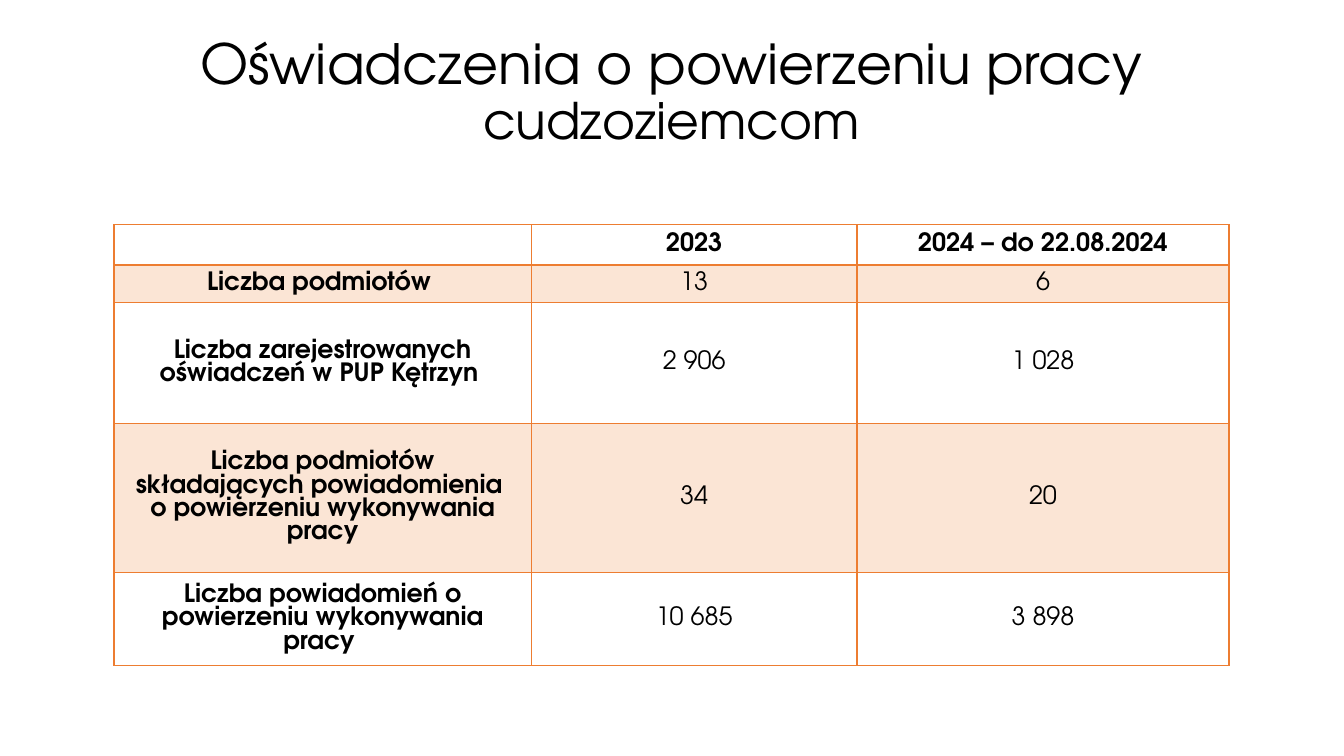
from lxml.etree import SubElement
from pptx import Presentation
from pptx.dml.color import RGBColor
from pptx.enum.text import MSO_ANCHOR as ANCHOR, PP_ALIGN as ALIGN
from pptx.oxml.ns import qn
from pptx.util import Inches, Pt

BLACK = RGBColor(0x00, 0x00, 0x00)
ORANGE = RGBColor(0xED, 0x7D, 0x31)

COLUMNS = [4.14, 3.23, 3.69]
HEIGHTS = [0.37, 0.37, 1.2, 1.48, 0.92]
ROWS = [
    ["", "2023", "2024 – do 22.08.2024"],
    ["Liczba podmiotów ", "13", "6"],
    ["Liczba zarejestrowanych oświadczeń w PUP Kętrzyn ", "2 906", "1 028"],
    ["Liczba podmiotów składających powiadomienia \no powierzeniu wykonywania pracy",
     "34", "20"],
    ["Liczba powiadomień o powierzeniu wykonywania pracy ", "10 685", "3 898"],
]


def write(p, text, size, bold=False, spacing=None):
    p.alignment = ALIGN.CENTER
    p.line_spacing = spacing
    r = p.add_run()
    r.text = text
    r.font.name = SlideBuilder.font
    r.font.size = Pt(size)
    r.font.bold = bold
    r.font.color.rgb = BLACK


class SlideBuilder:
    font = "TeX Gyre Adventor"

    def __init__(self, prs):
        self.s = prs.slides.add_slide(prs.slide_layouts[6])

    def title(self, runs, left, top, width, height):
        box = self.s.shapes.add_textbox(
            Inches(left), Inches(top), Inches(width), Inches(height))
        tf = box.text_frame
        tf.word_wrap = True
        tf.vertical_anchor = ANCHOR.MIDDLE
        for text, size in runs:
            write(tf.paragraphs[0], text, size, spacing=0.9)

    def border(self, cell, bottom):
        tc_pr = cell._tc.get_or_add_tcPr()
        widths = {"a:lnL": 1, "a:lnR": 1, "a:lnT": 1, "a:lnB": bottom}
        for i, (tag, width) in enumerate(widths.items()):
            ln = SubElement(tc_pr, qn(tag), w=str(Pt(width)))
            fill = SubElement(ln, qn("a:solidFill"))
            SubElement(fill, qn("a:srgbClr"), val=str(ORANGE))
            tc_pr.insert(i, ln)

    def shade(self, cell):
        cell.fill.solid()
        cell.fill.fore_color.rgb = ORANGE
        color = cell._tc.tcPr.find(".//" + qn("a:solidFill") + "/" + qn("a:srgbClr"))
        SubElement(color, qn("a:alpha"), val="20000")

    def cell(self, cell, text, bold, shaded, bottom):
        cell.vertical_anchor = ANCHOR.MIDDLE
        tf = cell.text_frame
        for i, line in enumerate(text.split("\n")):
            p = tf.add_paragraph() if i else tf.paragraphs[0]
            write(p, line, 18, bold, Pt(16.7))
        if shaded:
            self.shade(cell)
        else:
            cell.fill.background()
        self.border(cell, bottom)

    def table(self, rows, left, top):
        frame = self.s.shapes.add_table(
            len(rows), len(COLUMNS), Inches(left), Inches(top),
            Inches(sum(COLUMNS)), Inches(sum(HEIGHTS)))
        table = frame.table
        table.first_row = table.horz_banding = False
        for column, width in zip(table.columns, COLUMNS):
            column.width = Inches(width)
        for i, (row, height) in enumerate(zip(rows, HEIGHTS)):
            table.rows[i].height = Inches(height)
            for j, text in enumerate(row):
                self.cell(table.cell(i, j), text, bold=i == 0 or j == 0,
                          shaded=i % 2 == 1, bottom=1 if i else 2)


def main():
    prs = Presentation()
    prs.slide_width, prs.slide_height = Inches(13.33), Inches(7.5)
    slide = SlideBuilder(prs)
    slide.title([("Oświadczenia o powierzeniu pracy ", 39.6), ("cudzoziemcom", 36)],
                0.91, 0.3, 11.5, 1.25)
    slide.table(ROWS, 1.13, 2.23)
    prs.save("out.pptx")


if __name__ == "__main__":
    main()
